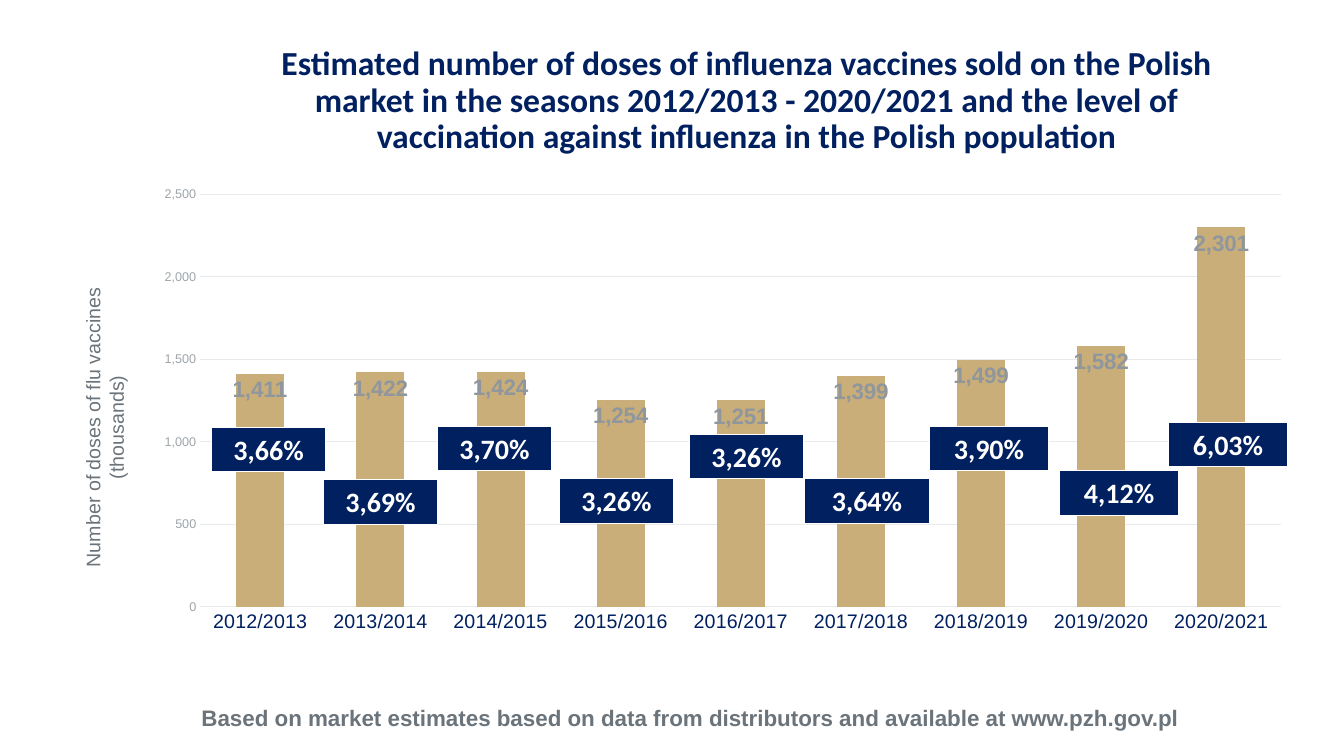
"""Build the slide on influenza vaccine doses sold in Poland."""
import pptx
import pptx.util
import pptx.chart.data
import pptx.dml.color
import pptx.enum.chart
import pptx.enum.shapes
import pptx.enum.text
import pptx.oxml
import pptx.oxml.ns

PX = 9144
NAVY, GOLD, GREY, PALE, WHITE = "002060", "CAAE7A", "6B747B", "E9EAEB", "FFFFFF"
ANCHOR = pptx.enum.text.MSO_ANCHOR


def tint(code):
    return pptx.dml.color.RGBColor.from_string(code)


def write(shape, text, name, size, color, bold, anchor):
    frame = shape.text_frame
    frame.word_wrap = True
    frame.vertical_anchor = anchor
    para = frame.paragraphs[0]
    para.alignment = pptx.enum.text.PP_ALIGN.CENTER
    run = para.add_run()
    run.text = text
    run.font.name = name
    run.font.size = pptx.util.Pt(size)
    run.font.bold = bold
    run.font.color.rgb = tint(color)
    return frame


deck = pptx.Presentation()
deck.slide_width, deck.slide_height = 1333 * PX, 750 * PX
slide = deck.slides.add_slide(deck.slide_layouts[6])
shapes = slide.shapes

data = pptx.chart.data.CategoryChartData(number_format="#,##0")
data.categories = [f"{year}/{year + 1}" for year in range(2012, 2021)]
data.add_series("Series 1", [1411, 1422, 1424, 1254, 1251, 1399, 1499, 1582, 2301])
kind = pptx.enum.chart.XL_CHART_TYPE.COLUMN_STACKED
chart = shapes.add_chart(kind, 141 * PX, 179 * PX, 1153 * PX, 460 * PX, data).chart
chart.has_legend = False
chart.has_title = False
chart.font.name = "Arial"
chart.font.size = pptx.util.Pt(10)
chart.font.color.rgb = tint(GREY)

plot = chart.plots[0]
plot.gap_width = 150
plot.overlap = 100
plot.vary_by_categories = False
fill = plot.series[0].format.fill
fill.solid()
fill.fore_color.rgb = tint(GOLD)
plot.has_data_labels = True
labels = plot.data_labels
labels.show_value = True
labels.position = pptx.enum.chart.XL_LABEL_POSITION.INSIDE_END
labels.number_format = "#,##0"
labels.number_format_is_linked = False
labels.font.bold = True

dates, doses = chart.category_axis, chart.value_axis
for item, size, color in (
    (labels, 16, "8F979D"),
    (dates.tick_labels, 14, NAVY),
    (doses.tick_labels, 9, "9EA5AA"),
):
    item.font.name = "Arial"
    item.font.size = pptx.util.Pt(size)
    item.font.color.rgb = tint(color)
for axis in (dates, doses):
    axis.major_tick_mark = pptx.enum.chart.XL_TICK_MARK.NONE
    axis.minor_tick_mark = pptx.enum.chart.XL_TICK_MARK.NONE
doses.minimum_scale, doses.maximum_scale, doses.major_unit = 0, 2500, 500
doses.tick_labels.number_format = "#,##0"
doses.tick_labels.number_format_is_linked = False
doses.format.line.fill.background()
for line in (dates.format.line, doses.major_gridlines.format.line):
    line.color.rgb = tint(PALE)
    line.width = pptx.util.Pt(0.75)

area = chart._chartSpace.chart.plotArea
for old in area.findall(pptx.oxml.ns.qn("c:layout")):
    area.remove(old)
area.insert(0, pptx.oxml.parse_xml(
    f'<c:layout {pptx.oxml.ns.nsdecls("c")}><c:manualLayout>'
    '<c:layoutTarget val="inner"/><c:xMode val="edge"/><c:yMode val="edge"/>'
    '<c:x val="0.05"/><c:y val="0.03"/><c:w val="0.93"/><c:h val="0.89"/>'
    '</c:manualLayout></c:layout>'))

title = shapes.add_textbox(239 * PX, 38 * PX, 1003 * PX, 125 * PX)
frame = write(
    title,
    "Estimated number of doses of influenza vaccines sold on the Polish market "
    "in the seasons 2012/2013 - 2020/2021 and the level of vaccination against "
    "influenza in the Polish population",
    "Calibri", 24, NAVY, True, ANCHOR.MIDDLE)
frame.margin_left = frame.margin_right = frame.margin_top = frame.margin_bottom = 0
frame.paragraphs[0].line_spacing = 0.9

note = shapes.add_textbox(75 * PX, 694 * PX, 1219 * PX, 37 * PX)
write(note, "Based on market estimates based on data from distributors and "
      "available at www.pzh.gov.pl", "Arial", 16, GREY, True, ANCHOR.TOP)

boxes = [
    (80, 263, 47, 322, WHITE, 1, "Number of doses of flu vaccines (thousands)",
     "Arial", 14, GREY, False, ANCHOR.MIDDLE)
]
for left, top, width, rate in (
    (210, 424, 113, "3,66%"),
    (321, 476, 113, "3,69%"),
    (434, 423, 113, "3,70%"),
    (555, 475, 113, "3,26%"),
    (684, 431, 113, "3,26%"),
    (798, 475, 124, "3,64%"),
    (922, 423, 118, "3,90%"),
    (1051, 467, 118, "4,12%"),
    (1159, 419, 118, "6,03%"),
):
    boxes.append((left, top, width, 44, NAVY, 0.75, rate,
                  "Calibri", 20, WHITE, True, ANCHOR.TOP))

for left, top, width, height, color, edge, *words in boxes:
    box = shapes.add_shape(pptx.enum.shapes.MSO_SHAPE.RECTANGLE,
                           left * PX, top * PX, width * PX, height * PX)
    box.shadow.inherit = False
    box.fill.solid()
    box.fill.fore_color.rgb = tint(color)
    box.line.color.rgb = tint(WHITE)
    box.line.width = pptx.util.Pt(edge)
    frame = write(box, *words)
    if height > width:
        frame._txBody.bodyPr.set("vert", "vert270")

deck.save("out.pptx")
